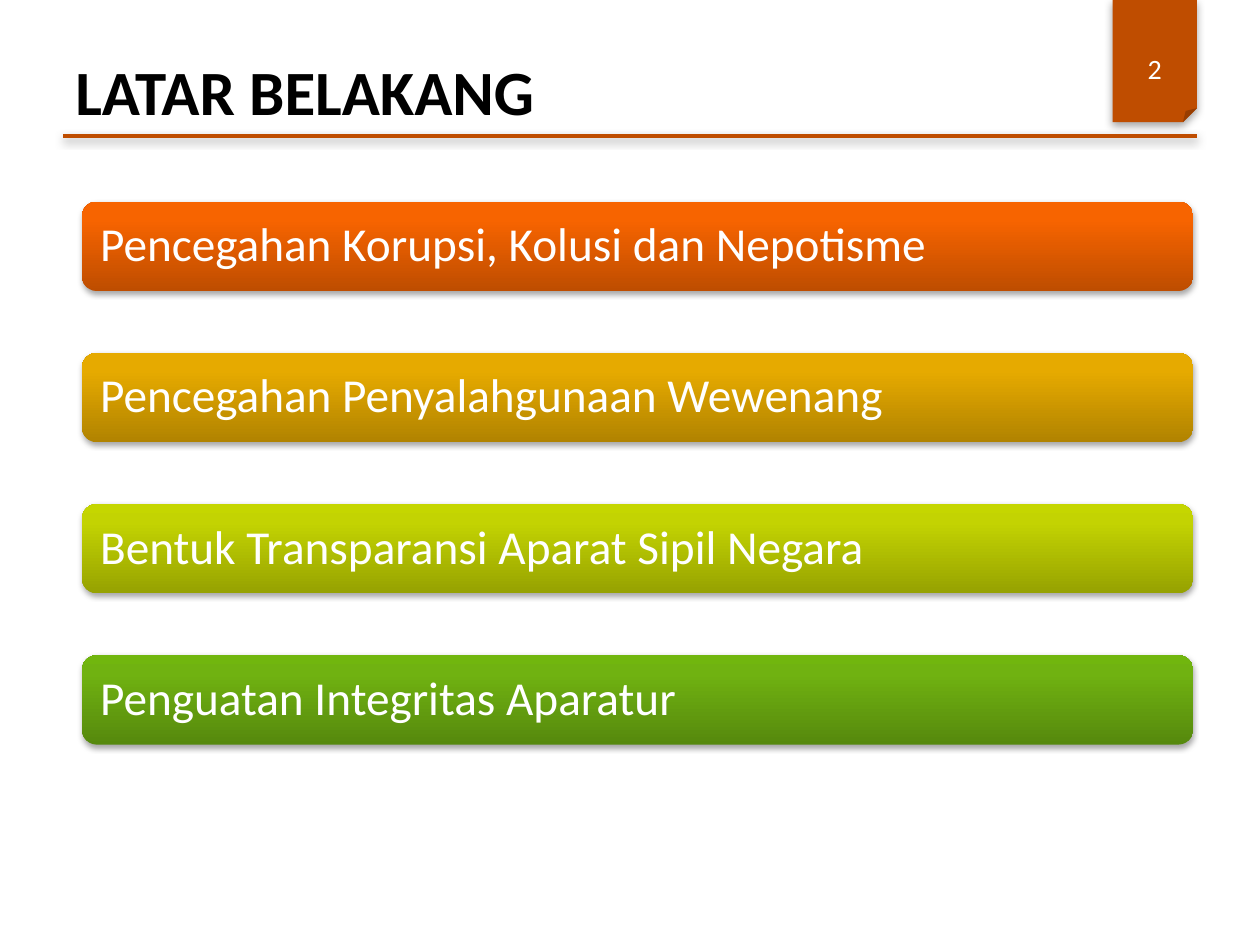
from copy import deepcopy
from lxml import etree
from pptx import Presentation
from pptx.dml.color import RGBColor
from pptx.enum.shapes import MSO_CONNECTOR, MSO_SHAPE
from pptx.enum.text import MSO_ANCHOR, PP_ALIGN
from pptx.oxml.ns import qn
from pptx.util import Inches, Pt

MIDDLE = MSO_ANCHOR.MIDDLE
LEFT, CENTER = PP_ALIGN.LEFT, PP_ALIGN.CENTER
FOLDED, ROUNDED = MSO_SHAPE.FOLDED_CORNER, MSO_SHAPE.ROUNDED_RECTANGLE
STRAIGHT = MSO_CONNECTOR.STRAIGHT


def rgb(value):
    return RGBColor.from_string(value)


def add_shadow(sp, blur, dist, alpha):
    effects = etree.SubElement(sp._element.spPr, qn("a:effectLst"))
    shadow = etree.SubElement(effects, qn("a:outerShdw"), blurRad=str(Pt(blur)),
                              dist=str(Pt(dist)), dir="5400000", rotWithShape="0")
    color = etree.SubElement(shadow, qn("a:srgbClr"), val="000000")
    etree.SubElement(color, qn("a:alpha"), val=str(alpha * 1000))


prs = Presentation()
prs.slide_width, prs.slide_height = Inches(10), Inches(7.5)
s = prs.slides.add_slide(prs.slide_layouts[6])

margin = Inches(0.5)
right = prs.slide_width - margin
tab_w = Inches(0.67)
tab_left = right - tab_w
rule_y = Inches(1.08)

tab = s.shapes.add_shape(FOLDED, tab_left, 0, tab_w, Inches(0.97))
tab.fill.solid()
tab.fill.fore_color.rgb = rgb("BF4D00")
tab.line.fill.background()
add_shadow(tab, 5, 1.8, 35)

rule = s.shapes.add_connector(STRAIGHT, margin, rule_y, right, rule_y)
rule.line.color.rgb = rgb("BF4D00")
rule.line.width = Pt(2)
add_shadow(rule, 5, 1.6, 38)

title = s.shapes.add_textbox(margin, Inches(0.3), right - margin, Inches(0.83))
number = s.shapes.add_textbox(tab_left, Inches(0.33), tab_w, Inches(0.42))
texts = [
    (title, "LATAR BELAKANG", LEFT, {"size": Pt(36), "bold": True}, "000000"),
    (number, "2", CENTER, {"size": Pt(16)}, "FFFFFF"),
]

bars = [
    ("Pencegahan Korupsi, Kolusi dan Nepotisme", ("BE4D00", "F76400", "F86400")),
    ("Pencegahan Penyalahgunaan Wewenang", ("B18300", "E6AA00", "E7AB00")),
    ("Bentuk Transparansi Aparat Sipil Negara", ("96A201", "C3D302", "C5D600")),
    ("Penguatan Integritas Aparatur", ("56890D", "70B211", "71B60E")),
]
bar_left, bar_top, bar_w, bar_h = (Inches(v) for v in (0.65, 1.6, 8.82, 0.71))
row_pitch = Inches(1.2)

for row, (label, colors) in enumerate(bars):
    sp = s.shapes.add_shape(ROUNDED, bar_left, bar_top + row * row_pitch, bar_w, bar_h)
    sp.fill.gradient()
    sp.fill.gradient_angle = 90
    stops = sp._element.spPr.find(".//" + qn("a:gsLst"))
    stops.append(deepcopy(stops[0]))
    for stop, position, color in zip(sp.fill.gradient_stops, (0, 0.8, 1), colors):
        stop.position = position
        stop.color.rgb = rgb(color)
    sp.line.fill.background()
    add_shadow(sp, 3.1, 1.8, 35)
    for side in ("left", "top", "right", "bottom"):
        setattr(sp.text_frame, "margin_" + side, Inches(0.11))
    sp.text_frame.paragraphs[0].line_spacing = 0.9
    texts.append((sp, label, LEFT, {"size": Pt(27)}, "FFFFFF"))

for sp, text, align, font, color in texts:
    tf = sp.text_frame
    tf.word_wrap = True
    tf.vertical_anchor = MIDDLE
    p = tf.paragraphs[0]
    p.alignment = align
    r = p.add_run()
    r.text = text
    r.font.color.rgb = rgb(color)
    for name, value in ({"name": "Calibri"} | font).items():
        setattr(r.font, name, value)

prs.save("out.pptx")
